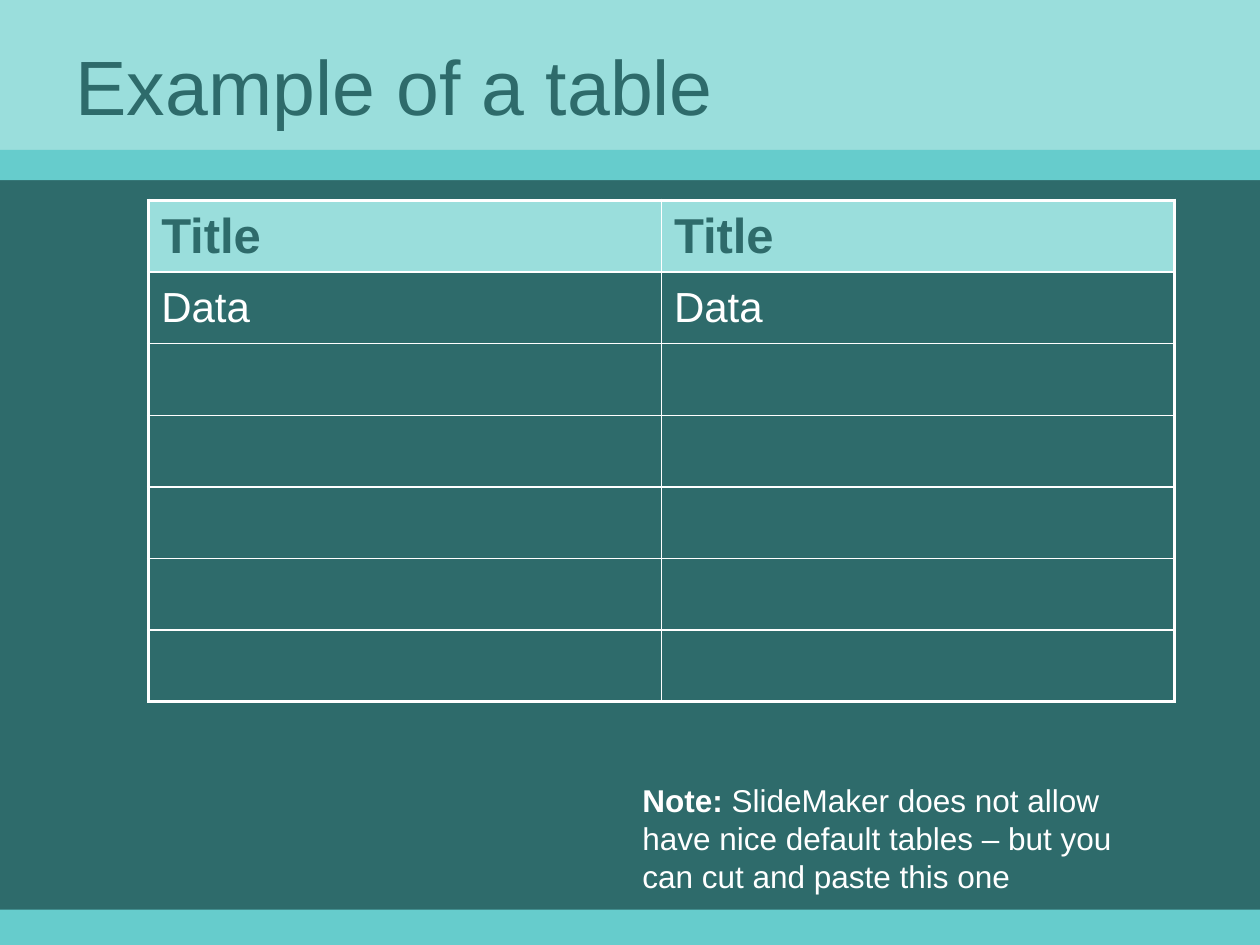
import lxml.etree
import pptx
import pptx.dml.color
import pptx.enum.shapes
import pptx.enum.text
import pptx.oxml.ns
import pptx.util

Inches = pptx.util.Inches
Pt = pptx.util.Pt

COLORS = {"background": "2E6B6B", "pale": "9ADEDC", "accent": "66CCCC", "white": "FFFFFF"}
ROWS = [["Title", "Title"], ["Data", "Data"]] + [["", ""]] * 5
OUTER_BORDER, INNER_BORDER = 2.25, 1


class SlideBuilder:
    """Holds the style and the current slide."""

    font = "Arial"

    def __init__(self, slide):
        self.slide = slide

    def color(self, name):
        return pptx.dml.color.RGBColor.from_string(COLORS[name])

    def background(self, color):
        fill = self.slide.background.fill
        fill.solid()
        fill.fore_color.rgb = self.color(color)

    def format_run(self, run, size, color, bold=False):
        run.font.name = self.font
        run.font.size = Pt(size)
        run.font.bold = bold
        run.font.color.rgb = self.color(color)

    def band(self, top, height, color):
        """Add a full-width stripe."""
        shape = self.slide.shapes.add_shape(
            pptx.enum.shapes.MSO_SHAPE.RECTANGLE, 0, Inches(top), Inches(10), Inches(height))
        shape.shadow.inherit = False
        shape.fill.solid()
        shape.fill.fore_color.rgb = self.color(color)
        shape.line.fill.background()

    def title(self, text, left, top, width, height):
        shape = self.slide.shapes.title
        shape.left, shape.top = Inches(left), Inches(top)
        shape.width, shape.height = Inches(width), Inches(height)
        text_frame = shape.text_frame
        text_frame.text = text
        text_frame.vertical_anchor = pptx.enum.text.MSO_ANCHOR.MIDDLE
        paragraph = text_frame.paragraphs[0]
        paragraph.alignment = pptx.enum.text.PP_ALIGN.LEFT
        self.format_run(paragraph.runs[0], 44, "background")
        # Bring the title in front of the bands
        shape.element.getparent().append(shape.element)

    def cell_border(self, cell, side, width):
        properties = cell._tc.get_or_add_tcPr()
        line = lxml.etree.SubElement(
            properties, pptx.oxml.ns.qn(f"a:ln{side}"), w=str(Pt(width)))
        fill = lxml.etree.SubElement(line, pptx.oxml.ns.qn("a:solidFill"))
        lxml.etree.SubElement(fill, pptx.oxml.ns.qn("a:srgbClr"), val=COLORS["white"])

    def table(self, rows, left, top, width, height):
        row_count, column_count = len(rows), len(rows[0])
        table = self.slide.shapes.add_table(
            row_count, column_count,
            Inches(left), Inches(top), Inches(width), Inches(height)).table
        table.first_row = table.horz_banding = False
        for row_index, row in enumerate(rows):
            for column_index, text in enumerate(row):
                cell = table.cell(row_index, column_index)
                is_outer = {
                    "L": column_index == 0,
                    "R": column_index == column_count - 1,
                    "T": row_index == 0,
                    "B": row_index == row_count - 1,
                }
                for side, outer in is_outer.items():
                    self.cell_border(cell, side, OUTER_BORDER if outer else INNER_BORDER)
                self.table_cell(cell, text, header=row_index == 0)

    def table_cell(self, cell, text, header):
        cell.vertical_anchor = pptx.enum.text.MSO_ANCHOR.MIDDLE
        if header:
            cell.fill.solid()
            cell.fill.fore_color.rgb = self.color("pale")
        else:
            cell.fill.background()
        if not text:
            return
        size = 28 if header else 24
        paragraph = cell.text_frame.paragraphs[0]
        paragraph.text = text
        paragraph.space_before = Pt(0.2 * size)
        self.format_run(paragraph.runs[0], size, "background" if header else "white", header)

    def note(self, label, text, left, top, width, height):
        """Add a text box with a bold label before its text."""
        text_frame = self.slide.shapes.add_textbox(
            Inches(left), Inches(top), Inches(width), Inches(height)).text_frame
        text_frame.word_wrap = True
        paragraph = text_frame.paragraphs[0]
        for content, bold in ((label, True), (text, False)):
            run = paragraph.add_run()
            run.text = content
            self.format_run(run, 18, "white", bold)


def main():
    presentation = pptx.Presentation()
    presentation.slide_width, presentation.slide_height = Inches(10), Inches(7.5)
    builder = SlideBuilder(presentation.slides.add_slide(presentation.slide_layouts[5]))

    builder.background("background")
    builder.band(0, 1.31, "pale")
    builder.band(1.19, 0.24, "accent")
    builder.band(7.22, 0.28, "accent")
    builder.title("Example of a table", 0.5, 0.28, 9.07, 0.79)
    builder.table(ROWS, 1.18, 1.59, 8.14, 3.98)
    builder.note(
        "Note: ",
        "SlideMaker does not allow have nice default tables – but you can cut and paste this one",
        5, 6.15, 4.21, 1)
    presentation.save("out.pptx")


if __name__ == "__main__":
    main()
